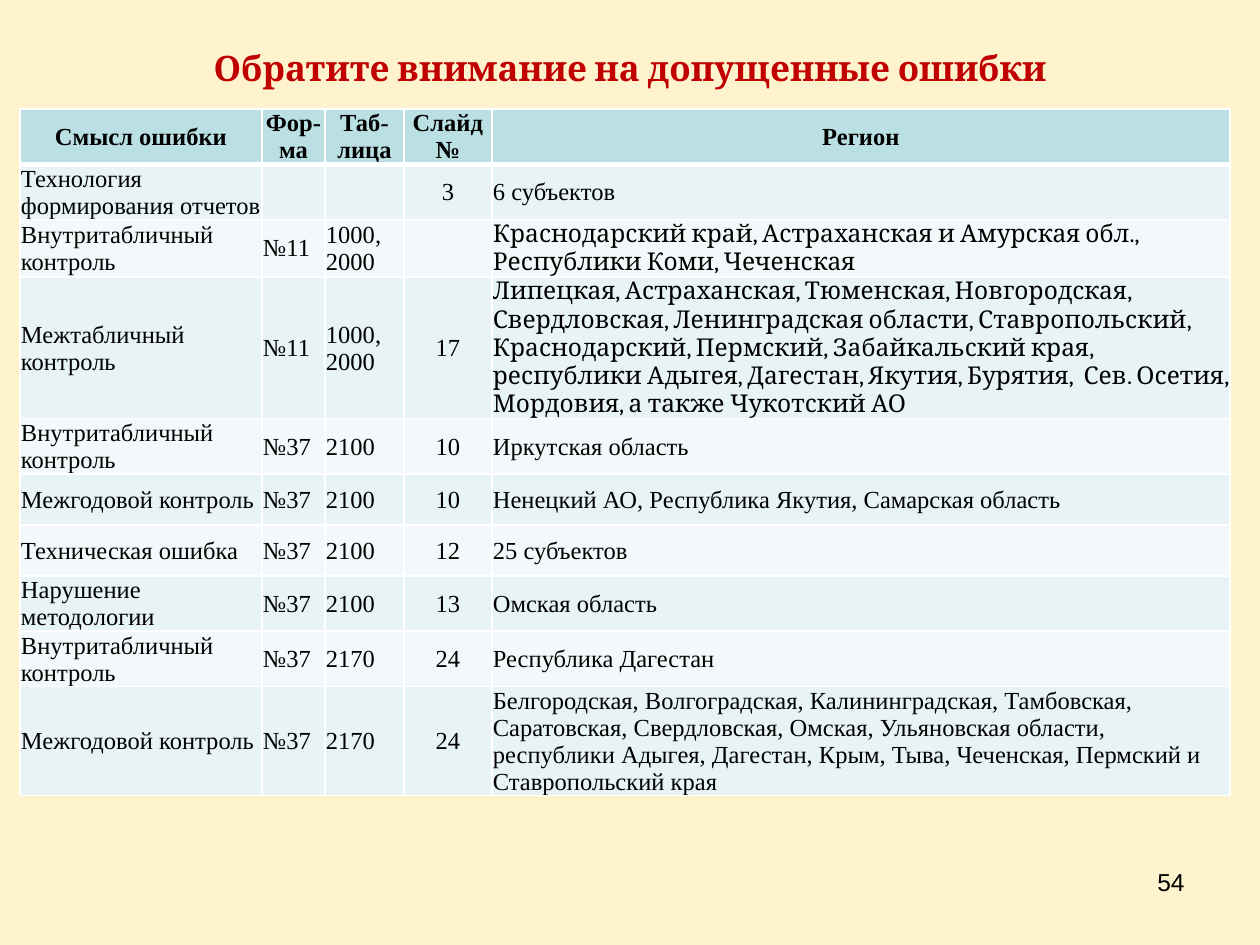
from lxml.etree import SubElement
from pptx import Presentation
from pptx.dml.color import RGBColor
from pptx.enum.text import MSO_ANCHOR, PP_ALIGN
from pptx.oxml.ns import qn
from pptx.util import Emu, Pt

COLORS = {
    "background": "FFF3CD",
    "title": "C00000",
    "text": "000000",
    "header": "BBE0E3",
    "odd": "E7F3F4",
    "even": "F3F9FA",
    "border": "FFFFFF",
}
SCALE = 914400 / 126


def px(length):
    return Emu(round(length * SCALE))


def write_text(frame, text, font="Times New Roman", size=14, color="text",
               bold=False, align=PP_ALIGN.LEFT, anchor=MSO_ANCHOR.MIDDLE):
    frame.word_wrap = True
    frame.vertical_anchor = anchor
    paragraph = frame.paragraphs[0]
    paragraph.alignment = align
    paragraph.font.size = Pt(size)
    if text:
        run = paragraph.add_run()
        run.text = text
        run.font.name = font
        run.font.size = Pt(size)
        run.font.bold = bold
        run.font.color.rgb = RGBColor.from_string(COLORS[color])


presentation = Presentation()
presentation.slide_width = px(1260)
presentation.slide_height = px(945)
slide = presentation.slides.add_slide(presentation.slide_layouts[5])
slide.background.fill.solid()
slide.background.fill.fore_color.rgb = RGBColor.from_string(COLORS["background"])

title = slide.shapes.title
title.left, title.top, title.width, title.height = px(63), px(38), px(1134), px(60)
write_text(title.text_frame, "Обратите внимание на допущенные ошибки",
           font="Cambria", size=20, color="title", bold=True, align=PP_ALIGN.CENTER)

rows = [
    ["Смысл ошибки", "Фор-ма", "Таб-лица", "Слайд №", "Регион"],
    ["Технология формирования отчетов", "", "", "3", "6 субъектов"],
    ["Внутритабличный контроль", "№11", "1000, 2000", "",
     "Краснодарский край, Астраханская и Амурская обл., Республики Коми, Чеченская"],
    ["Межтабличный контроль", "№11", "1000, 2000", "17",
     "Липецкая, Астраханская, Тюменская, Новгородская, Свердловская, "
     "Ленинградская области, Ставропольский, Краснодарский, Пермский, "
     "Забайкальский края, республики Адыгея, Дагестан, Якутия, Бурятия,  "
     "Сев. Осетия, Мордовия, а также Чукотский АО"],
    ["Внутритабличный контроль", "№37", "2100", "10", "Иркутская область"],
    ["Межгодовой контроль", "№37", "2100", "10",
     "Ненецкий АО, Республика Якутия, Самарская область"],
    ["Техническая ошибка", "№37", "2100", "12", "25 субъектов"],
    ["Нарушение методологии", "№37", "2100", "13", "Омская область"],
    ["Внутритабличный контроль", "№37", "2170", "24", "Республика Дагестан"],
    ["Межгодовой контроль", "№37", "2170", "24",
     "Белгородская, Волгоградская, Калининградская, Тамбовская, Саратовская, "
     "Свердловская, Омская, Ульяновская области, республики Адыгея, Дагестан, "
     "Крым, Тыва, Чеченская, Пермский и Ставропольский края"],
]
column_widths = [242, 63, 79, 88, 738]
row_height = 51
slide_column, region_column = 3, 4
cambria_rows = (2, 3)

table = slide.shapes.add_table(
    len(rows), len(column_widths), px(20), px(109),
    px(sum(column_widths)), px(row_height * len(rows))).table
for column, width in zip(table.columns, column_widths):
    column.width = px(width)

for row_index, row in enumerate(rows):
    header = row_index == 0
    fill = "header" if header else "odd" if row_index % 2 else "even"
    for column_index, text in enumerate(row):
        cell = table.cell(row_index, column_index)
        cell.margin_left = cell.margin_right = cell.margin_top = px(1)
        cell.margin_bottom = 0
        centered = header or column_index == slide_column
        cambria = column_index == region_column and row_index in cambria_rows
        write_text(cell.text_frame, text, bold=header,
                   font="Cambria" if cambria else "Times New Roman",
                   align=PP_ALIGN.CENTER if centered else PP_ALIGN.LEFT)
        cell.vertical_anchor = MSO_ANCHOR.MIDDLE
        properties = cell._tc.get_or_add_tcPr()
        for side in ("L", "R", "T", "B"):
            thick = (header and side == "B") or (row_index == 1 and side == "T")
            line = SubElement(properties, qn(f"a:ln{side}"), w=str(Pt(3 if thick else 1)))
            line_fill = SubElement(line, qn("a:solidFill"))
            SubElement(line_fill, qn("a:srgbClr"), val=COLORS["border"])
        cell.fill.solid()
        cell.fill.fore_color.rgb = RGBColor.from_string(COLORS[fill])

page_number = slide.shapes.add_textbox(px(903), px(861), px(294), px(66))
write_text(page_number.text_frame, "54", font="Arial", align=PP_ALIGN.RIGHT,
           anchor=MSO_ANCHOR.TOP)

presentation.save("out.pptx")
